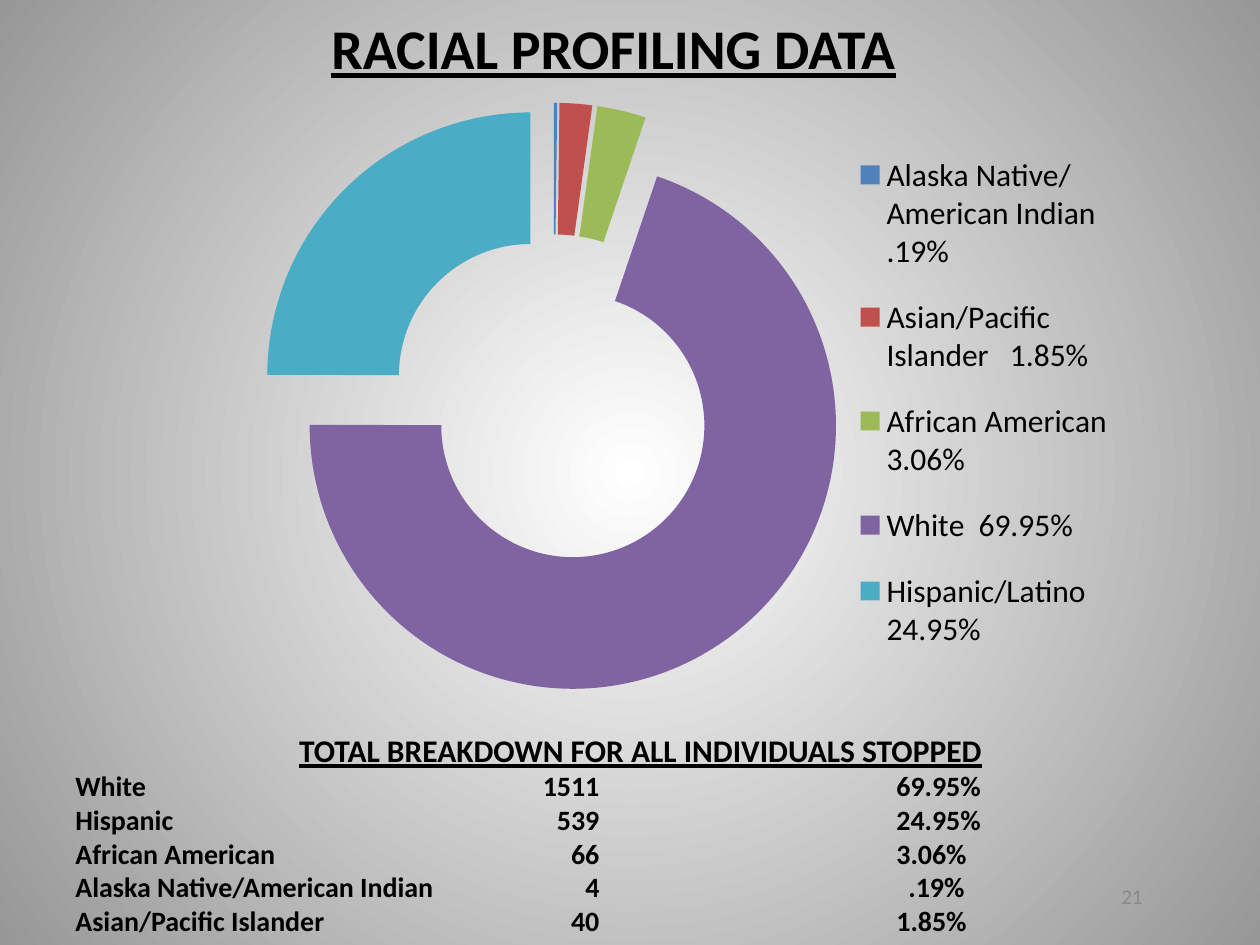
from lxml.etree import SubElement
from pptx import Presentation
from pptx.chart.data import CategoryChartData
from pptx.dml.color import RGBColor
from pptx.enum.chart import XL_CHART_TYPE, XL_LEGEND_POSITION
from pptx.enum.text import MSO_ANCHOR, MSO_AUTO_SIZE, PP_ALIGN
from pptx.oxml import parse_xml
from pptx.oxml.ns import nsdecls, qn
from pptx.util import Pt

PX = 914400 // 126
FONT = "Calibri"
TITLE = "RACIAL PROFILING DATA"
SHARES = [
    ("Alaska Native/American Indian .19%", 0.2, "4F81BD"),
    ("Asian/Pacific Islander   1.85%", 2, "C0504D"),
    ("African American 3.06%", 3, "9BBB59"),
    ("White  69.95%", 70, "8064A2"),
    ("Hispanic/Latino 24.95%", 25, "4BACC6"),
]
BREAKDOWN_HEADING = "TOTAL BREAKDOWN FOR ALL INDIVIDUALS STOPPED"
BREAKDOWN = [
    ("White", "1511", "69.95%"),
    ("Hispanic", "539", "24.95%"),
    ("African American", "66", "3.06%"),
    ("Alaska Native/American Indian", "4", "", ".19%"),
    ("Asian/Pacific Islander", "40", "1.85%"),
]
COLUMN_TABS = [(524, "r"), (821, "l"), (833, "l")]
PAGE_NUMBER = "21"
PLOT_LAYOUT = {"x": 0.07, "y": 0.03, "w": 0.64, "h": 0.94}
LEGEND_LAYOUT = {"x": 0.69, "y": 0.07, "w": 0.27, "h": 0.87}


def px(*lengths):
    return [length * PX for length in lengths]


def rgb(value):
    return RGBColor.from_string(value)


def style(font, size, color="000000", bold=False, underline=False):
    font.name, font.size = FONT, Pt(size)
    font.color.rgb = rgb(color)
    font.bold, font.underline = bold, underline


def add_text(slide, box, lines, align, anchor=MSO_ANCHOR.TOP):
    frame = slide.shapes.add_textbox(*px(*box)).text_frame
    frame.word_wrap = True
    frame.vertical_anchor = anchor
    for index, (text, look) in enumerate(lines):
        paragraph = frame.paragraphs[0] if index == 0 else frame.add_paragraph()
        paragraph.text = text
        paragraph.alignment = align
        style(paragraph.font, **look)
    return frame


def set_layout(parent, index, layout, inner=False):
    for old in parent.findall(qn("c:layout")):
        parent.remove(old)
    target = '<c:layoutTarget val="inner"/>' if inner else ""
    modes = "".join(f'<c:{side}Mode val="edge"/>' for side in "xy")
    sizes = "".join(f'<c:{key} val="{value}"/>' for key, value in layout.items())
    parent.insert(index, parse_xml(
        f'<c:layout {nsdecls("c")}><c:manualLayout>{target}{modes}{sizes}'
        "</c:manualLayout></c:layout>"))


def set_background(slide):
    fill = slide.background.fill
    fill.gradient()
    for stop, color in zip(fill.gradient_stops, ("FFFFFF", "979797")):
        stop.color.rgb = rgb(color)
    gradient = next(slide.element.iter(qn("a:gradFill")))
    gradient.replace(gradient.find(qn("a:lin")), parse_xml(
        f'<a:path {nsdecls("a")} path="circle">'
        '<a:fillToRect l="50000" t="50000" r="50000" b="50000"/></a:path>'))


def add_doughnut(slide):
    data = CategoryChartData()
    data.categories = [label for label, _, _ in SHARES]
    data.add_series("Series 1", [share for _, share, _ in SHARES])
    chart = slide.shapes.add_chart(
        XL_CHART_TYPE.DOUGHNUT, *px(168, 84, 989, 630), data).chart
    style(chart.font, 18)
    chart.has_title = False
    chart.has_legend = True
    chart.legend.position = XL_LEGEND_POSITION.RIGHT
    chart.legend.include_in_layout = False
    plot = chart.plots[0]
    plot.vary_by_categories = True
    for index, (_, _, color) in enumerate(SHARES):
        fill = plot.series[0].points[index].format.fill
        fill.solid()
        fill.fore_color.rgb = rgb(color)
    root = chart.element
    next(root.iter(qn("c:ser"))).find(qn("c:tx")).addnext(
        parse_xml(f'<c:explosion {nsdecls("c")} val="25"/>'))
    set_layout(next(root.iter(qn("c:plotArea"))), 0, PLOT_LAYOUT, inner=True)
    set_layout(next(root.iter(qn("c:legend"))), 1, LEGEND_LAYOUT)


def add_breakdown(slide):
    heading = (BREAKDOWN_HEADING, dict(size=18, bold=True, underline=True))
    rows = [("\t".join(row), dict(size=16, bold=True)) for row in BREAKDOWN]
    frame = add_text(slide, (63, 725, 1155, 220), [heading, *rows], PP_ALIGN.LEFT)
    frame.auto_size = MSO_AUTO_SIZE.SHAPE_TO_FIT_TEXT
    frame.paragraphs[0].alignment = PP_ALIGN.CENTER
    for paragraph in frame.paragraphs[1:]:
        tabs = parse_xml(f'<a:tabLst {nsdecls("a")}/>')
        for position, align in COLUMN_TABS:
            SubElement(tabs, qn("a:tab"), pos=str(position * PX), algn=align)
        paragraph._p.pPr.insert(0, tabs)


def main():
    """Build the racial profiling data slide."""
    deck = Presentation()
    deck.slide_width, deck.slide_height = px(1260, 945)
    slide = deck.slides.add_slide(deck.slide_layouts[6])
    set_background(slide)
    add_text(slide, (136, 0, 955, 95),
             [(TITLE, dict(size=32, bold=True, underline=True))],
             PP_ALIGN.CENTER, MSO_ANCHOR.MIDDLE)
    add_doughnut(slide)
    add_breakdown(slide)
    add_text(slide, (861, 871, 294, 50),
             [(PAGE_NUMBER, dict(size=12, color="898989"))],
             PP_ALIGN.RIGHT, MSO_ANCHOR.MIDDLE)
    deck.save("out.pptx")


if __name__ == "__main__":
    main()
